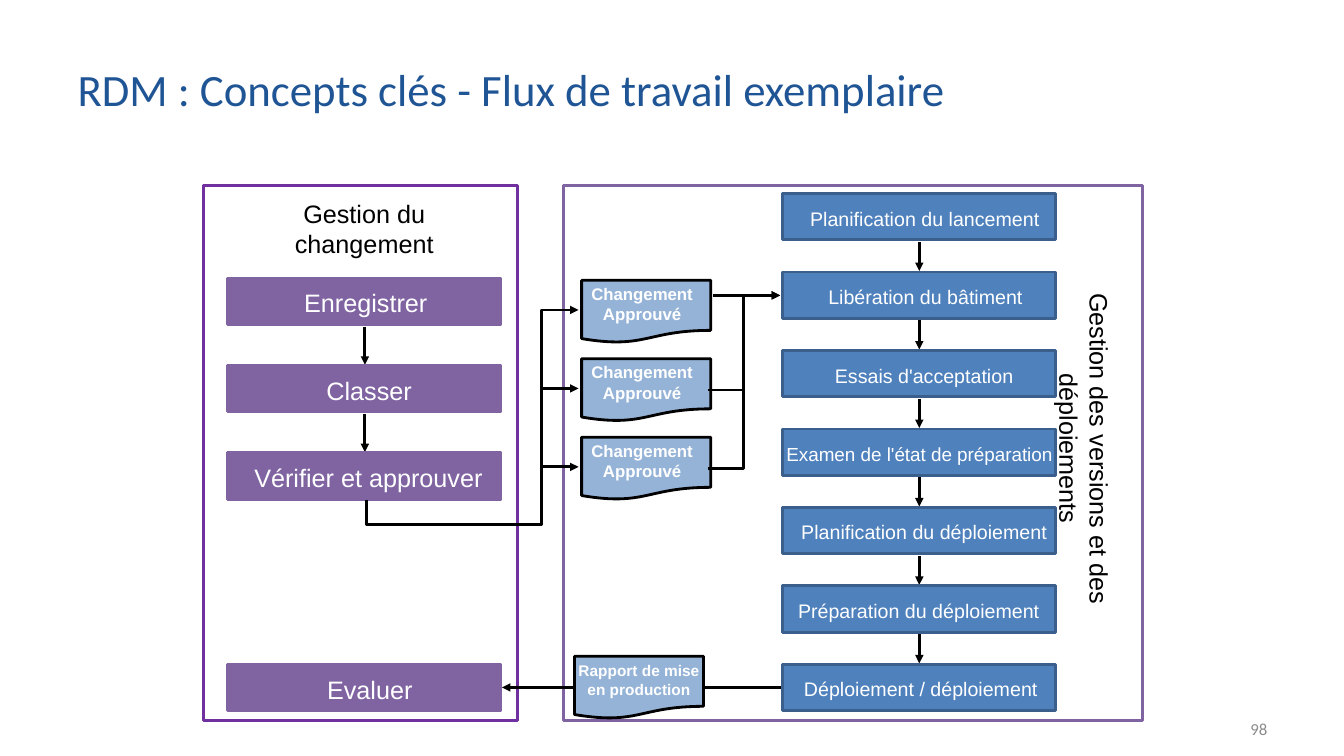
import pptx
import pptx.util
import pptx.dml.color
import pptx.enum.shapes
import pptx.enum.text
import pptx.oxml
import pptx.oxml.ns

SHAPE = pptx.enum.shapes.MSO_SHAPE
ALIGN = pptx.enum.text.PP_ALIGN
MIDDLE = pptx.enum.text.MSO_ANCHOR.MIDDLE
SLIDE_WIDTH = pptx.util.Inches(13.33)
SLIDE_HEIGHT = pptx.util.Inches(7.5)

BOX_WIDTH, BOX_HEIGHT = 20.33, 6.13
DOCUMENT_WIDTH, DOCUMENT_HEIGHT = 9.6, 8.27
CHANGE_LEFT, CHANGE_TOP, CHANGE_PITCH = 16.95, 36.8, 11.55
RELEASE_LEFT, RELEASE_TOP, RELEASE_PITCH = 58.2, 25.6, 10.38
APPROVED_LEFT, APPROVED_TOP = 43.28, 37.07

CHANGE_STEPS = [("Enregistrer", 0.1), ("Classer", 0.35), ("Vérifier et approuver", 0.3)]
RELEASE_STEPS = [
    ("Planification du lancement", 14, 0.45),
    ("Libération du bâtiment", 14, 0.5),
    ("Essais d'acceptation", 14, 0.4),
    ("Examen de l'état de préparation", 13.5, 0.05),
    ("Planification du déploiement", 14, 0.4),
    ("Préparation du déploiement", 14, 0),
    ("Déploiement / déploiement", 14, 0.15),
]


def across(share):
    return round(SLIDE_WIDTH * share / 100)


def down(share):
    return round(SLIDE_HEIGHT * share / 100)


def area(left, top, width, height):
    return across(left), down(top), across(width), down(height)


def color(hex_value):
    return pptx.dml.color.RGBColor.from_string(hex_value)


def assign(target, values):
    for key, value in values.items():
        setattr(target, key, value)


def write(holder, wording, size, ink, align=ALIGN.CENTER, face="Arial", bold=False, **frame):
    assign(holder.text_frame, {"word_wrap": True, "vertical_anchor": MIDDLE, **frame})
    paragraph = holder.text_frame.paragraphs[0]
    paragraph.text = wording
    paragraph.alignment = align
    assign(paragraph.font, {"size": pptx.util.Pt(size), "name": face, "bold": bold})
    paragraph.font.color.rgb = color(ink)


def label(slide, place, wording, size, ink, rotation=0, **style):
    caption = slide.shapes.add_textbox(*area(*place))
    caption.rotation = rotation
    write(caption, wording, size, ink, **style)


def outline(item, ink, weight):
    item.line.color.rgb = color(ink)
    item.line.width = pptx.util.Pt(weight)


def block(slide, place, border, fill=None, weight=2, kind=SHAPE.RECTANGLE):
    item = slide.shapes.add_shape(kind, *area(*place))
    item.shadow.inherit = False
    if fill:
        item.fill.solid()
        item.fill.fore_color.rgb = color(fill)
    else:
        item.fill.background()
    outline(item, border, weight)
    return item


def step(slide, left, top, wording, size, fill, border, nudge):
    item = block(slide, (left, top, BOX_WIDTH, BOX_HEIGHT), border, fill)
    write(item, wording, size, "FFFFFF", word_wrap=False, margin_left=across(2 * nudge),
          margin_right=0, margin_top=down(0.4), margin_bottom=0)


def document(slide, left, top, wording, size, right_margin):
    item = block(slide, (left, top, DOCUMENT_WIDTH, DOCUMENT_HEIGHT), "000000", "95B3D7",
                 kind=SHAPE.FLOWCHART_DOCUMENT)
    write(item, wording, size, "FFFFFF", bold=True, margin_left=0,
          margin_right=across(right_margin), margin_top=0, margin_bottom=down(0.4))


def add_arrowhead(item):
    line = item.line._get_or_add_ln()
    line.append(pptx.oxml.parse_xml(
        '<a:tailEnd %s type="triangle"/>' % pptx.oxml.ns.nsdecls("a")))


def straight(slide, start, end, arrow=True):
    link = slide.shapes.add_connector(pptx.enum.shapes.MSO_CONNECTOR.STRAIGHT,
                                      across(start[0]), down(start[1]),
                                      across(end[0]), down(end[1]))
    outline(link, "000000", 2)
    link._element.spPr.append(pptx.oxml.parse_xml(
        "<a:effectLst %s/>" % pptx.oxml.ns.nsdecls("a")))
    if arrow:
        add_arrowhead(link)


def route(slide, *corners):
    points = [(across(x), down(y)) for x, y in corners]
    builder = slide.shapes.build_freeform(*points[0])
    builder.add_line_segments(points[1:], close=False)
    wire = builder.convert_to_shape()
    wire.shadow.inherit = False
    wire.fill.background()
    outline(wire, "000000", 2)
    add_arrowhead(wire)


def change_flow(slide):
    block(slide, (15.15, 24.53, 23.33, 70.8), "7030A0", weight=2.25)
    for row, (wording, nudge) in enumerate(CHANGE_STEPS):
        top = CHANGE_TOP + row * CHANGE_PITCH
        step(slide, CHANGE_LEFT, top, wording, 18, "8064A2", "8064A2", nudge)
        if row < len(CHANGE_STEPS) - 1:
            straight(slide, (27.15, top + 6.4), (27.15, top + 11.45))
    step(slide, CHANGE_LEFT, RELEASE_TOP + 6 * RELEASE_PITCH, "Evaluer", 18,
         "8064A2", "8064A2", 0.4)
    label(slide, (19.6, 25.5, 15, 9.33), "Gestion du changement", 18, "000000")


def release_flow(slide):
    block(slide, (41.93, 24.53, 43.05, 70.8), "8064A2", weight=2.25)
    for row, (wording, size, nudge) in enumerate(RELEASE_STEPS):
        top = RELEASE_TOP + row * RELEASE_PITCH
        step(slide, RELEASE_LEFT, top, wording, size, "4F81BD", "3A5F8C", nudge)
        if row < len(RELEASE_STEPS) - 1:
            straight(slide, (68.4, top + 6.4), (68.4, top + 10.25))
    label(slide, (64.46, 54.67, 32.48, 9.33), "Gestion des versions et des déploiements",
          18, "000000", rotation=90)


def approved_changes(slide):
    for row in range(3):
        offset = row * RELEASE_PITCH
        document(slide, APPROVED_LEFT, APPROVED_TOP + offset, "Changement Approuvé", 12, 0.6)
        route(slide, (27.25, 66.13), (27.25, 69.4), (40.28, 69.4),
              (40.28, 41 + offset), (43.05, 41 + offset))
        if row:
            joint = 41.2 + offset
            route(slide, (52.65, joint), (55.35, joint), (55.35, 39.07), (58.05, 39.07))
    straight(slide, (55.58, 39.07), (53.03, 39.07), arrow=False)


def production_report(slide):
    straight(slide, (58.13, 90.93), (37.35, 90.93))
    document(slide, 42.75, 86.8, "Rapport de mise en production", 11, 0)


def main():
    deck = pptx.Presentation()
    assign(deck, {"slide_width": SLIDE_WIDTH, "slide_height": SLIDE_HEIGHT})
    slide = deck.slides.add_slide(deck.slide_layouts[6])
    label(slide, (5.03, 4, 74.33, 15.33), "RDM : Concepts clés - Flux de travail exemplaire",
          32, "205595", align=ALIGN.LEFT, face="Calibri")
    change_flow(slide)
    release_flow(slide)
    approved_changes(slide)
    production_report(slide)
    label(slide, (71.7, 93.73, 23.33, 5.33), "98", 12, "8C8C8C",
          align=ALIGN.RIGHT, face="Calibri")
    deck.save("out.pptx")


if __name__ == "__main__":
    main()
